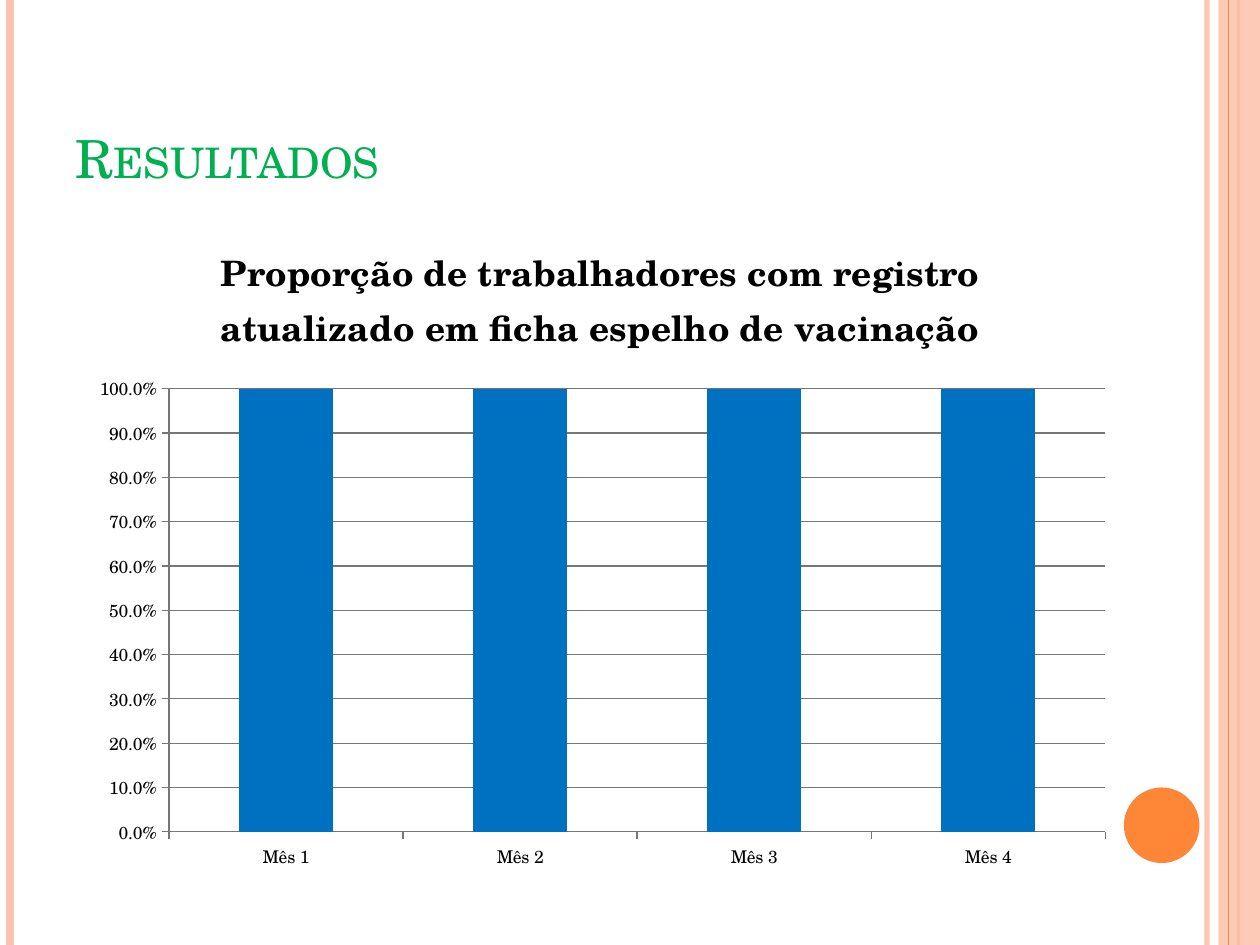
import dataclasses

import pptx
import pptx.chart.data
import pptx.dml.color
import pptx.enum.chart
import pptx.enum.shapes
import pptx.enum.text
import pptx.oxml
import pptx.oxml.ns
import pptx.util


@dataclasses.dataclass(frozen=True)
class Theme:
    font: str = "TeX Gyre Schola"
    heading: str = "00B050"
    accent: str = "FE8637"
    accent_light: str = "FEC3AE"
    bars: str = "0070C0"
    text: str = "000000"
    axis: str = "777777"
    heading_size: int = 30
    chart_title_size: int = 20
    label_size: int = 10


def rgb(code):
    return pptx.dml.color.RGBColor.from_string(code)


def set_opacity(color_parent, percent):
    color = color_parent.find(".//" + pptx.oxml.ns.qn("a:srgbClr"))
    alpha = pptx.oxml.parse_xml(f"<a:alpha {pptx.oxml.ns.nsdecls('a')}/>")
    alpha.set("val", str(percent * 1000))
    color.append(alpha)


class SlideBuilder:
    """Places elements on a grid of 100 columns by 75 rows."""

    COLUMNS, ROWS = 100, 75

    def __init__(self, deck, theme):
        self.theme = theme
        self.column = deck.slide_width / self.COLUMNS
        self.row = deck.slide_height / self.ROWS
        self.slide = deck.slides.add_slide(deck.slide_layouts[6])

    def box(self, left, top, width, height):
        return (round(left * self.column), round(top * self.row),
                round(width * self.column), round(height * self.row))

    def stripe(self, column, weight, color, opacity=100):
        x, top, _, bottom = self.box(column, 0, 0, self.ROWS)
        stripe = self.slide.shapes.add_connector(
            pptx.enum.shapes.MSO_CONNECTOR.STRAIGHT, x, top, x, bottom)
        stripe.line.color.rgb = rgb(color)
        stripe.line.width = pptx.util.Pt(weight)
        if opacity < 100:
            set_opacity(stripe.line._ln, opacity)
        properties = stripe._element.spPr
        properties.append(pptx.oxml.parse_xml(
            f"<a:effectLst {pptx.oxml.ns.nsdecls('a')}/>"))

    def block(self, preset, area, color, opacity=100):
        block = self.slide.shapes.add_shape(preset, *self.box(*area))
        block.shadow.inherit = False
        block.fill.solid()
        block.fill.fore_color.rgb = rgb(color)
        block.line.fill.background()
        if opacity < 100:
            set_opacity(block._element.spPr, opacity)

    def style_font(self, font, size, color, bold=False):
        font.name = self.theme.font
        font.size = pptx.util.Pt(size)
        font.color.rgb = rgb(color)
        font.bold = bold

    def heading(self, wording, area):
        frame = self.slide.shapes.add_textbox(*self.box(*area)).text_frame
        frame.word_wrap = True
        frame.vertical_anchor = pptx.enum.text.MSO_ANCHOR.BOTTOM
        run = frame.paragraphs[0].add_run()
        run.text = wording
        self.style_font(run.font, self.theme.heading_size, self.theme.heading)
        run.font._element.set("cap", "small")

    def column_chart(self, title, months, shares, area, plot):
        theme = self.theme
        data = pptx.chart.data.CategoryChartData(number_format="0.0%")
        data.categories = months
        data.add_series(title, shares)
        chart = self.slide.shapes.add_chart(
            pptx.enum.chart.XL_CHART_TYPE.COLUMN_CLUSTERED,
            *self.box(*area), data).chart
        self.style_font(chart.font, theme.label_size, theme.text)
        chart.has_legend = False

        # Chart title
        chart.has_title = True
        chart.chart_title.include_in_layout = False
        paragraph = chart.chart_title.text_frame.paragraphs[0]
        paragraph.line_spacing = 1.5
        run = paragraph.add_run()
        run.text = title
        self.style_font(run.font, theme.chart_title_size, theme.text, bold=True)

        # Columns
        columns = chart.plots[0]
        columns.gap_width = 150
        columns.vary_by_categories = False
        fill = columns.series[0].format.fill
        fill.solid()
        fill.fore_color.rgb = rgb(theme.bars)

        # Axes and gridlines
        scale = chart.value_axis
        scale.minimum_scale, scale.maximum_scale = 0, 1
        scale.major_unit = 0.1
        scale.has_major_gridlines = True
        scale.tick_labels.number_format = "0.0%"
        scale.tick_labels.number_format_is_linked = False
        for axis in (scale, chart.category_axis):
            axis.major_tick_mark = pptx.enum.chart.XL_TICK_MARK.OUTSIDE
        for part in (scale, chart.category_axis, scale.major_gridlines):
            part.format.line.color.rgb = rgb(theme.axis)
            part.format.line.width = pptx.util.Pt(0.75)

        # Inner plot area, as shares of the chart
        plot_area = chart._chartSpace.chart.plotArea
        for old in plot_area.findall(pptx.oxml.ns.qn("c:layout")):
            plot_area.remove(old)
        sizes = "".join(f'<c:{key} val="{share}"/>'
                        for key, share in zip("xywh", plot))
        plot_area.insert(0, pptx.oxml.parse_xml(
            f"<c:layout {pptx.oxml.ns.nsdecls('c')}><c:manualLayout>"
            '<c:layoutTarget val="inner"/><c:xMode val="edge"/>'
            f'<c:yMode val="edge"/>{sizes}</c:manualLayout></c:layout>'))


def main():
    deck = pptx.Presentation()
    deck.slide_width = pptx.util.Inches(10)
    deck.slide_height = pptx.util.Inches(7.5)
    theme = Theme()
    page = SlideBuilder(deck, theme)
    shapes = pptx.enum.shapes.MSO_SHAPE

    # Side decoration
    page.stripe(95.8, 3, theme.accent_light, opacity=93)
    page.stripe(0.8, 4.5, theme.accent_light)
    page.stripe(98.3, 1.5, theme.accent)
    page.block(shapes.RECTANGLE, (96.7, 0, 3.3, page.ROWS),
               theme.accent_light, opacity=87)
    page.stripe(97.5, 0.75, theme.accent)
    page.block(shapes.OVAL, (89.2, 62.5, 6, 6), theme.accent)

    # Heading
    page.heading("Resultados", (5, 3, 81.7, 12.5))

    # Monthly results
    months = [f"Mês {number}" for number in range(1, 5)]
    page.column_chart(
        "Proporção de trabalhadores com registro atualizado "
        "em ficha espelho de vacinação",
        months, [1] * len(months),
        area=(5.9, 17, 83.5, 53.3), plot=(0.09, 0.26, 0.89, 0.66))

    deck.save("out.pptx")


if __name__ == "__main__":
    main()
